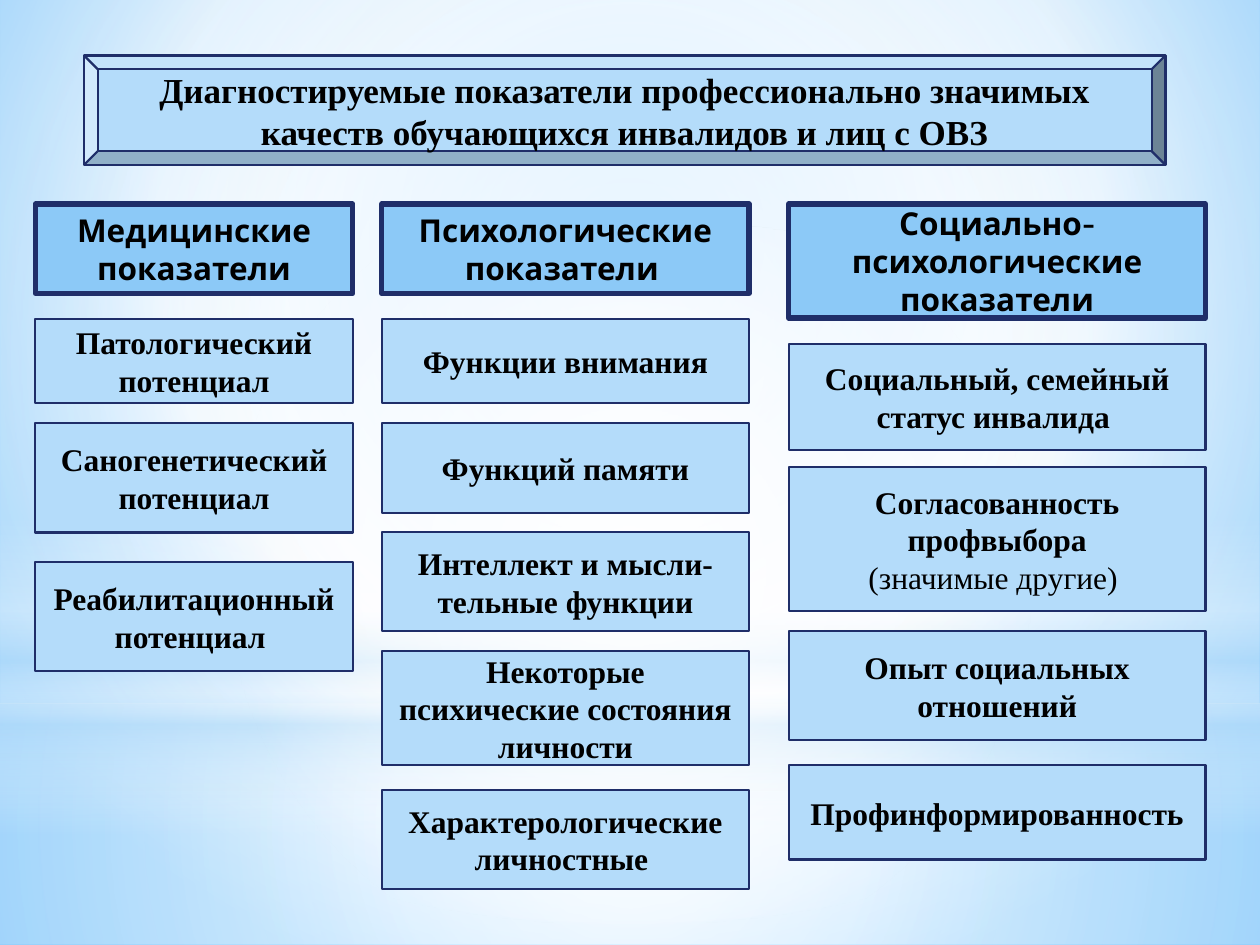
"""Build a slide of diagnostic indicators arranged in three columns."""
from lxml import etree
from pptx import Presentation
from pptx import util as u
from pptx.dml.color import RGBColor
from pptx.enum import shapes, text
from pptx.oxml.ns import qn

COLORS = {"box": "B4DCFA", "header": "8CC9F7", "line": "1F2E69", "text": "000000",
          "white": "FFFFFF", "sky": "9ED5FF", "deep": "5BB9FF"}
SERIF, SANS = "Times New Roman", "Cabin"
RECT, OVAL, BEVEL = (shapes.MSO_SHAPE.RECTANGLE, shapes.MSO_SHAPE.OVAL,
                     shapes.MSO_SHAPE.BEVEL)
CENTER = (50, 50, 50, 50)

TITLE = "Диагностируемые показатели профессионально значимых качеств обучающихся инвалидов и лиц с ОВЗ"
TITLE_BOX = (48, 31.7, 618, 62.6)
HEADER_TOP = 116.6

LAYERS = [
    (RECT, (0, 401.8, 720, 138.2),
     [(0, "white", 91), (37, "white", 76), (100, "box", 79)], CENTER),
    (RECT, (0, 0, 720, 401.8),
     [(0, "white", 89), (48, "white", 62), (100, "box", 79)], CENTER),
    (RECT, (0, 296.6, 720, 180),
     [(0, "white", 0), (29, "white", 30), (45, "box", 40), (55, "white", 26),
      (65, "box", 60), (100, "white", 0)], None),
    (OVAL, (0, 126, 720, 401.8), [(0, "white", 100), (56, "white", 0)], CENTER),
]

COLUMNS = [
    (20.2, 181.4, "Медицинские показатели", 51.1, [
        (182.2, 48.2, "Патологический потенциал"),
        (241.9, 62.4, "Саногенетический потенциал"),
        (321.1, 62.4, "Реабилитационный потенциал ")]),
    (218.2, 209.8, "Психологические показатели ", 51.1, [
        (182.2, 48.2, "Функции внимания"),
        (241.9, 51.1, "Функций памяти"),
        (304, 56.7, "Интеллект и мысли-тельные функции"),
        (372.2, 65.2, "Некоторые психические состояния личности"),
        (451.4, 56.7, "Характерологические личностные ")]),
    (450.7, 238.2, "Социально-психологические показатели", 65.2, [
        (196.4, 61, "Социальный, семейный статус инвалида "),
        (267.1, 82.2, "Согласованность профвыбора", "(значимые другие) "),
        (360.7, 62.4, "Опыт социальных отношений"),
        (437.3, 53.9, "Профинформированность")]),
]


def color(name):
    """Return the named colour."""
    return RGBColor.from_string(COLORS[name])


def write(frame, *lines, size=18, font=SERIF, bold_lines=1):
    """Write centred lines, the first bold_lines of them bold."""
    frame.word_wrap = True
    frame.auto_size = text.MSO_AUTO_SIZE.NONE
    frame.vertical_anchor = text.MSO_ANCHOR.MIDDLE
    for index, line in enumerate(lines):
        paragraph = frame.add_paragraph() if index else frame.paragraphs[0]
        paragraph.alignment = text.PP_ALIGN.CENTER
        run = paragraph.add_run()
        run.text = line
        run.font.size = u.Pt(size)
        run.font.name = font
        run.font.bold = index < bold_lines
        run.font.color.rgb = color("text")


def set_gradient(fill, owner, stops, focus):
    """Give the fill of an owner element a circular or, without focus, vertical gradient."""
    fill.gradient()
    gradient = owner.find(".//" + qn("a:gradFill"))
    for child in list(gradient):
        gradient.remove(child)
    stop_list = etree.SubElement(gradient, qn("a:gsLst"))
    for position, name, alpha in stops:
        stop = etree.SubElement(stop_list, qn("a:gs"), pos=str(position * 1000))
        shade = etree.SubElement(stop, qn("a:srgbClr"), val=COLORS[name])
        if alpha < 100:
            etree.SubElement(shade, qn("a:alpha"), val=str(alpha * 1000))
    if focus:
        circle = etree.SubElement(gradient, qn("a:path"), path="circle")
        sides = {side: str(value * 1000) for side, value in zip("ltrb", focus)}
        etree.SubElement(circle, qn("a:fillToRect"), **sides)
    else:
        etree.SubElement(gradient, qn("a:lin"), ang="5400000", scaled="0")


class Board:
    """Hold the presentation style and the current slide."""

    def __init__(self, presentation):
        self.slide = presentation.slides.add_slide(presentation.slide_layouts[5])

    def background(self, stops, focus):
        """Paint the slide background."""
        set_gradient(self.slide.background.fill, self.slide._element, stops, focus)

    def shape(self, kind, box):
        """Add a preset shape without shadow."""
        shape = self.slide.shapes.add_shape(kind, *map(u.Pt, box))
        shape.shadow.inherit = False
        return shape

    def layer(self, kind, box, stops, focus):
        """Add a translucent backdrop."""
        shape = self.shape(kind, box)
        shape.line.fill.background()
        set_gradient(shape.fill, shape._element, stops, focus)

    def panel(self, box, *lines, kind=RECT, fill="box", weight=1.25, font=SERIF):
        """Add an outlined panel with its text."""
        shape = self.shape(kind, box)
        shape.fill.solid()
        shape.fill.fore_color.rgb = color(fill)
        shape.line.color.rgb = color("line")
        shape.line.width = u.Pt(weight)
        if lines:
            write(shape.text_frame, *lines, font=font)

    def title(self, box, line):
        """Put the title placeholder on a bevelled plate."""
        self.panel(box, kind=BEVEL)
        title = self.slide.shapes.title
        title.left, title.top, title.width, title.height = map(u.Pt, box)
        title.text_frame.margin_left = title.text_frame.margin_right = u.Pt(15)
        write(title.text_frame, line, size=20)
        self.slide.shapes._spTree.append(title._element)

    def column(self, left, width, heading, height, items):
        """Add a heading and the panels below it."""
        self.panel((left, HEADER_TOP, width, height), heading,
                   fill="header", weight=3, font=SANS)
        for top, item_height, *lines in items:
            self.panel((left, top, width, item_height), *lines)


def main():
    """Build and save the presentation."""
    presentation = Presentation()
    presentation.slide_width, presentation.slide_height = u.Pt(720), u.Pt(540)
    board = Board(presentation)
    board.background([(0, "sky", 100), (60, "white", 100), (100, "deep", 100)],
                     (20, 10, 20, 60))
    for layer in LAYERS:
        board.layer(*layer)
    board.title(TITLE_BOX, TITLE)
    for column in COLUMNS:
        board.column(*column)
    presentation.save("out.pptx")


if __name__ == "__main__":
    main()
